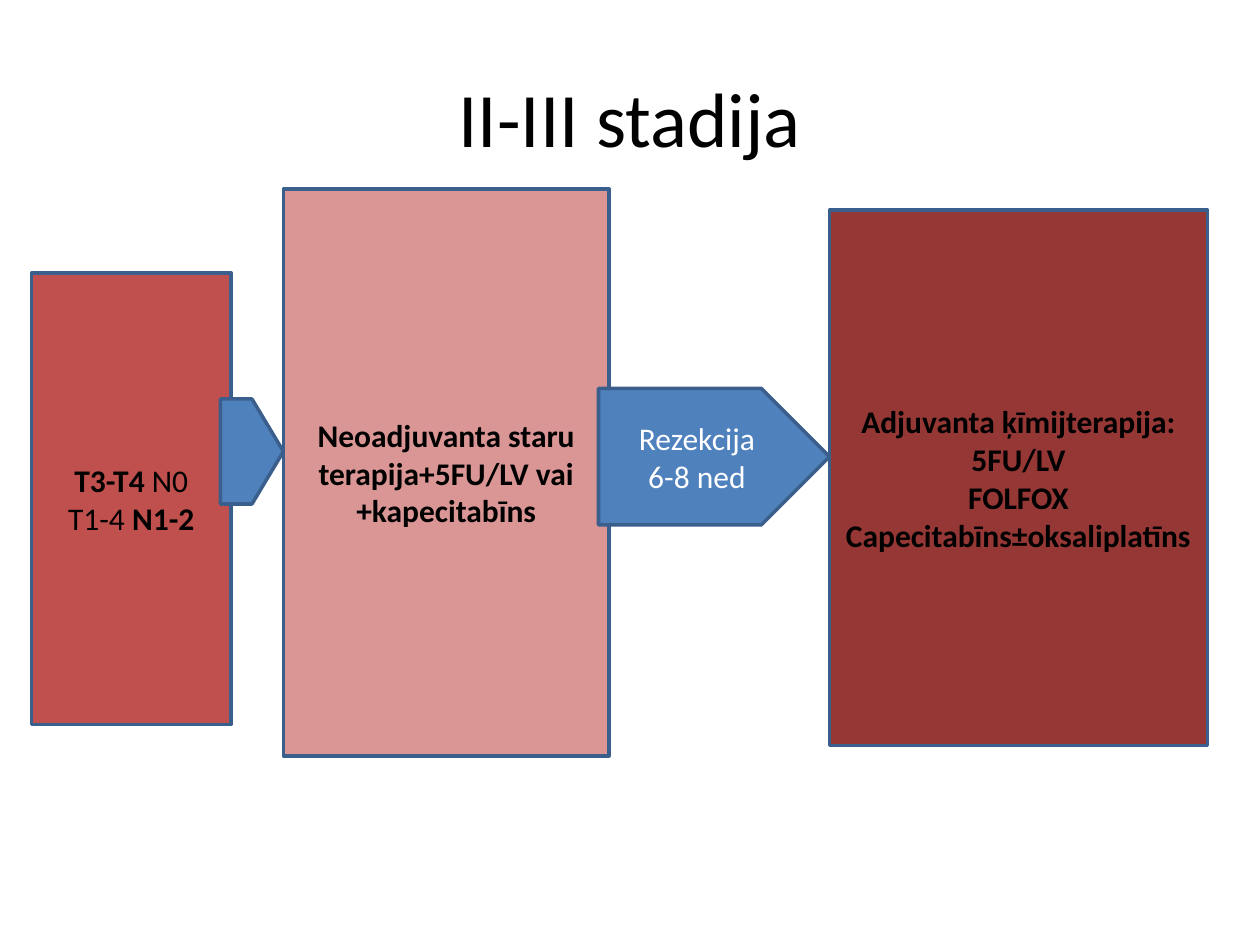
from pptx import Presentation
from pptx.dml.color import RGBColor
from pptx.enum.shapes import MSO_SHAPE
from pptx.enum.text import MSO_ANCHOR, PP_ALIGN
from pptx.util import Pt

FONT = "Calibri"
BLACK = RGBColor(0x00, 0x00, 0x00)
WHITE = RGBColor(0xFF, 0xFF, 0xFF)
RED = RGBColor(0xC0, 0x50, 0x4D)
LIGHT_RED = RGBColor(0xD9, 0x96, 0x94)
DARK_RED = RGBColor(0x95, 0x37, 0x35)
BLUE = RGBColor(0x4F, 0x81, 0xBD)
OUTLINE = RGBColor(0x3A, 0x5F, 0x8C)


def write_text(shape, lines, size, color):
    """Write centred lines, each a list of (text, bold) runs."""
    frame = shape.text_frame
    frame.word_wrap = True
    frame.vertical_anchor = MSO_ANCHOR.MIDDLE
    for index, line in enumerate(lines):
        paragraph = frame.add_paragraph() if index else frame.paragraphs[0]
        paragraph.alignment = PP_ALIGN.CENTER
        for text, bold in line:
            run = paragraph.add_run()
            run.text = text
            run.font.name = FONT
            run.font.size = Pt(size)
            run.font.bold = bold
            run.font.color.rgb = color


def add_title(slide, text):
    title = slide.shapes.add_textbox(Pt(36), Pt(21.6), Pt(648), Pt(90))
    write_text(title, [[(text, False)]], 44, BLACK)


def add_block(slide, kind, bounds, fill, lines=(), color=BLACK):
    shape = slide.shapes.add_shape(kind, *(Pt(value) for value in bounds))
    shape.shadow.inherit = False
    shape.fill.solid()
    shape.fill.fore_color.rgb = fill
    shape.line.color.rgb = OUTLINE
    shape.line.width = Pt(2)
    write_text(shape, lines, 18, color)


def add_box(slide, bounds, fill, lines):
    add_block(slide, MSO_SHAPE.RECTANGLE, bounds, fill, lines)


def add_arrow(slide, bounds, lines=()):
    add_block(slide, MSO_SHAPE.PENTAGON, bounds, BLUE, lines, WHITE)


def main():
    presentation = Presentation()
    presentation.slide_width = Pt(720)
    presentation.slide_height = Pt(540)
    slide = presentation.slides.add_slide(presentation.slide_layouts[6])

    add_title(slide, "II-III stadija")

    # Stage and neoadjuvant treatment
    add_box(slide, (18, 156, 114, 258), RED, [
        [("T3-T4", True), (" N0", False)],
        [("T1-4 ", False), ("N1-2", True)],
    ])
    add_box(slide, (162, 108, 186, 324), LIGHT_RED, [
        [("Neoadjuvanta staru terapija+5FU/LV vai +kapecitabīns", True)],
    ])

    # Arrows between the steps
    add_arrow(slide, (342, 222, 132, 78),
              [[("Rezekcija", False)], [("6-8 ned", False)]])
    add_arrow(slide, (126, 228, 36, 60))

    # Adjuvant treatment
    adjuvant_lines = ("Adjuvanta ķīmijterapija:", "5FU/LV", "FOLFOX",
                      "Capecitabīns±oksaliplatīns")
    add_box(slide, (474, 120, 216, 306), DARK_RED,
            [[(line, True)] for line in adjuvant_lines])

    presentation.save("out.pptx")


if __name__ == "__main__":
    main()
